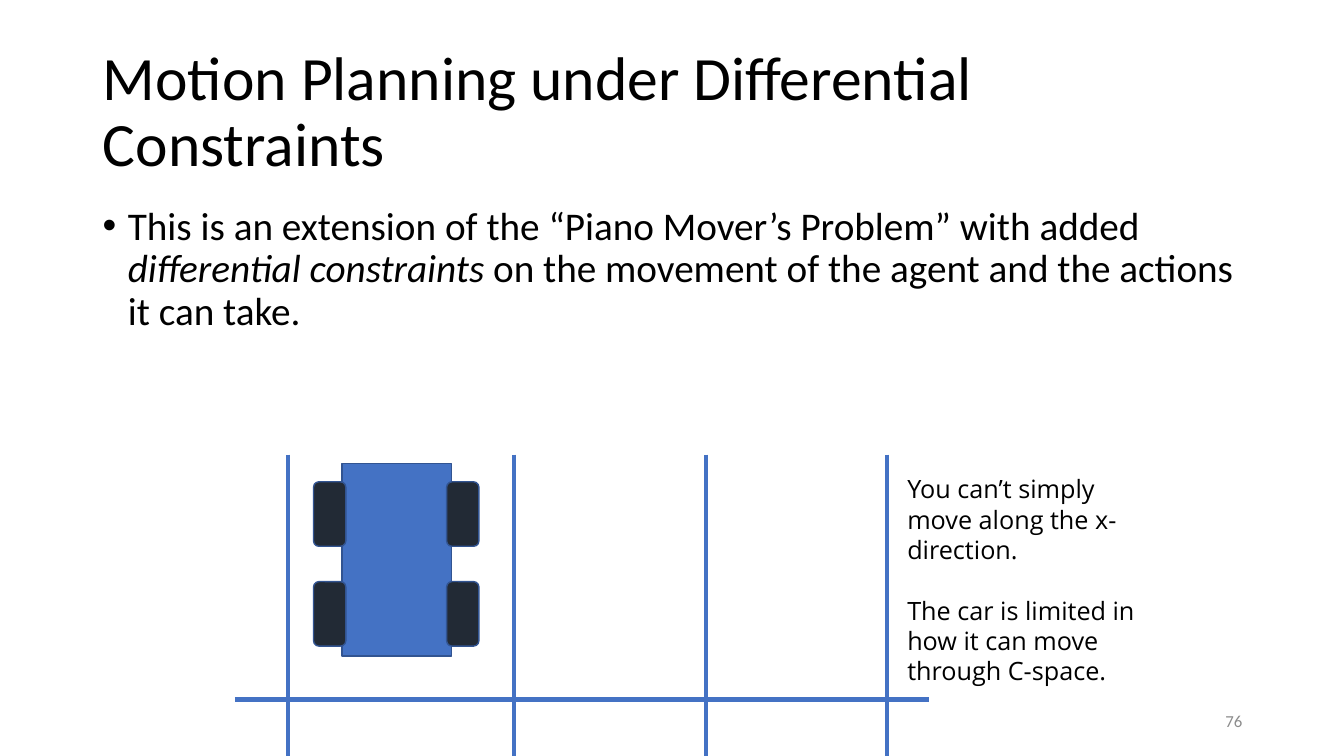
"""Build the slide on motion planning under differential constraints."""
from dataclasses import dataclass
from itertools import product

from lxml.etree import SubElement
from pptx import Presentation
from pptx.dml.color import RGBColor
from pptx.enum.shapes import MSO_CONNECTOR, MSO_SHAPE
from pptx.enum.text import MSO_ANCHOR, MSO_AUTO_SIZE, PP_ALIGN
from pptx.oxml.ns import qn
from pptx.util import Emu, Pt

EMU_PER_PX = 9144
COLORS = {
    "text": "000000",
    "number": "8C8C8C",
    "blue": "4472C4",
    "outline": "325491",
    "wheel": "222A35",
}
PAGE_WIDTH, PAGE_HEIGHT = 1333, 750
LANE_TOP = 451
LANE_XS = (286, 510, 700, 880)
CURB_Y, CURB_LEFT, CURB_RIGHT = 694, 233, 921
WHEEL_XS = (311, 443)
WHEEL_YS = (478, 577)
WHEEL_WIDTH, WHEEL_HEIGHT = 32, 64


@dataclass(frozen=True)
class Area:
    left: int
    top: int
    width: int
    height: int

    def emu(self):
        return [px(value) for value in (self.left, self.top, self.width, self.height)]


@dataclass(frozen=True)
class Part:
    kind: MSO_SHAPE
    area: Area
    fill: str


@dataclass(frozen=True)
class Line:
    start: tuple[int, int]
    end: tuple[int, int]


def px(value: int) -> Emu:
    return Emu(value * EMU_PER_PX)


def color(name: str) -> RGBColor:
    return RGBColor.from_string(COLORS[name])


def set_font(para, size: int, name: str = "Calibri", color_name: str = "text") -> None:
    para.font.size = Pt(size)
    para.font.name = name
    para.font.color.rgb = color(color_name)


def add_text_box(page, area: Area, anchor: MSO_ANCHOR = MSO_ANCHOR.TOP):
    frame = page.shapes.add_textbox(*area.emu()).text_frame
    frame.word_wrap = True
    frame.vertical_anchor = anchor
    return frame


def add_title(page) -> None:
    title = page.shapes.title
    title.left, title.top, title.width, title.height = Area(92, 40, 1150, 145).emu()
    frame = title.text_frame
    frame.text = "Motion Planning under Differential Constraints"
    frame.auto_size = MSO_AUTO_SIZE.NONE
    frame.vertical_anchor = MSO_ANCHOR.MIDDLE
    para = frame.paragraphs[0]
    para.alignment = PP_ALIGN.LEFT
    para.line_spacing = 0.9
    set_font(para, 44)


def add_body(page) -> None:
    para = add_text_box(page, Area(92, 200, 1150, 476)).paragraphs[0]
    para.line_spacing = 0.9
    properties = para._p.get_or_add_pPr()
    properties.set("marL", str(px(25)))
    properties.set("indent", str(px(-25)))
    SubElement(properties, qn("a:buFont"), typeface="Arial")
    SubElement(properties, qn("a:buChar"), char="•")
    set_font(para, 28)
    para.add_run().text = "This is an extension of the “Piano Mover’s Problem” with added "
    span = para.add_run()
    span.text = "differential constraints"
    span.font.italic = True
    para.add_run().text = " on the movement of the agent and the actions it can take."


def add_number(page) -> None:
    para = add_text_box(page, Area(942, 695, 300, 40), MSO_ANCHOR.MIDDLE).paragraphs[0]
    para.text = "76"
    para.alignment = PP_ALIGN.RIGHT
    set_font(para, 12, color_name="number")


def add_remarks(page) -> None:
    frame = add_text_box(page, Area(890, 465, 258, 222))
    frame.text = (
        "You can’t simply move along the x-direction.\n"
        "The car is limited in how it can move through C-space."
    )
    for para in frame.paragraphs:
        set_font(para, 18, "Open Sans")
    frame.paragraphs[1].space_before = Pt(22)


def add_part(page, part: Part) -> None:
    shape = page.shapes.add_shape(part.kind, *part.area.emu())
    shape.shadow.inherit = False
    shape.fill.solid()
    shape.fill.fore_color.rgb = color(part.fill)
    shape.line.color.rgb = color("outline")
    shape.line.width = Pt(1)


def add_line(page, line: Line) -> None:
    points = [px(value) for value in line.start + line.end]
    connector = page.shapes.add_connector(MSO_CONNECTOR.STRAIGHT, *points)
    connector.line.color.rgb = color("blue")
    connector.line.width = Pt(3)
    SubElement(connector._element.spPr, qn("a:effectLst"))


def main() -> None:
    deck = Presentation()
    deck.slide_width, deck.slide_height = px(PAGE_WIDTH), px(PAGE_HEIGHT)
    page = deck.slides.add_slide(deck.slide_layouts.get_by_name("Title Only"))
    add_title(page)
    add_body(page)
    add_number(page)

    chassis = Part(MSO_SHAPE.RECTANGLE, Area(339, 460, 109, 191), "blue")
    wheels = [
        Part(MSO_SHAPE.ROUNDED_RECTANGLE, Area(x, y, WHEEL_WIDTH, WHEEL_HEIGHT), "wheel")
        for y, x in product(WHEEL_YS, WHEEL_XS)
    ]
    for part in [chassis, *wheels]:
        add_part(page, part)

    lanes = [Line((x, LANE_TOP), (x, PAGE_HEIGHT)) for x in LANE_XS]
    curb = Line((CURB_LEFT, CURB_Y), (CURB_RIGHT, CURB_Y))
    for line in [*lanes, curb]:
        add_line(page, line)

    add_remarks(page)
    deck.save("out.pptx")


if __name__ == "__main__":
    main()
